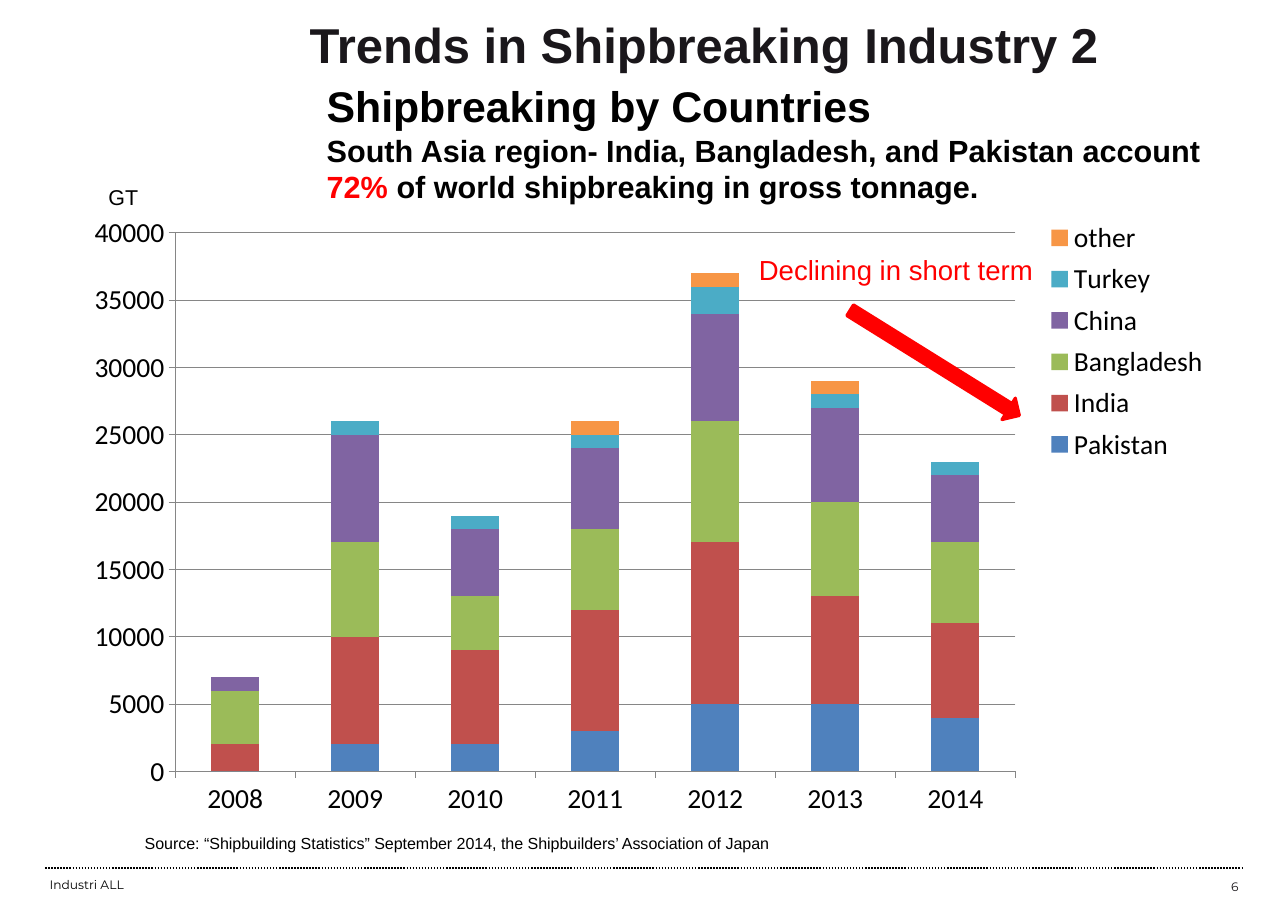
"""Slide on shipbreaking tonnage by country, 2008 to 2014."""
import pptx
import pptx.chart.data
import pptx.dml.color
import pptx.enum.chart
import pptx.enum.dml
import pptx.enum.shapes
import pptx.enum.text
import pptx.oxml
import pptx.oxml.ns
import pptx.util

BLACK, INK, RED, GRID = "000000", "1A171B", "FF0000", "868686"
LEFT, RIGHT = pptx.enum.text.PP_ALIGN.LEFT, pptx.enum.text.PP_ALIGN.RIGHT
TOP, MIDDLE = pptx.enum.text.MSO_ANCHOR.TOP, pptx.enum.text.MSO_ANCHOR.MIDDLE

deck = pptx.Presentation()
deck.slide_width = pptx.util.Inches(11.69)
deck.slide_height = pptx.util.Inches(8.27)
slide = deck.slides.add_slide(deck.slide_layouts[5])
rgb = pptx.dml.color.RGBColor.from_string


def share(left, top, width, height):
    """Turn percentages of the slide into lengths."""
    across, down = deck.slide_width / 100, deck.slide_height / 100
    return [int(left * across), int(top * down), int(width * across), int(height * down)]


def style(font, size, color, name="Arial", bold=False):
    """Set the look of a font."""
    font.size, font.name, font.bold = pptx.util.Pt(size), name, bold
    font.color.rgb = rgb(color)


footer_rule = slide.shapes.add_connector(
    pptx.enum.shapes.MSO_CONNECTOR.STRAIGHT, *share(3.51, 95.3, 96.49, 95.3))
footer_rule.line.color.rgb = rgb(BLACK)
footer_rule.line.width = pptx.util.Pt(1)
footer_rule.line.dash_style = pptx.enum.dml.MSO_LINE.ROUND_DOT
footer_rule._element.spPr.append(pptx.oxml.parse_xml(
    f"<a:effectLst {pptx.oxml.ns.nsdecls('a')}/>"))

summary = slide.shapes.title
summary.left, summary.top, summary.width, summary.height = share(24.42, 10.8, 73.4, 9.67)
frame = summary.text_frame
frame.auto_size = pptx.enum.text.MSO_AUTO_SIZE.NONE
frame.word_wrap = True
frame.vertical_anchor = MIDDLE
frame.margin_left = frame.margin_right = pptx.util.Inches(0.11)
frame.margin_top = frame.margin_bottom = pptx.util.Inches(0.06)
summary_lines = [
    [("Shipbreaking by Countries", 28, BLACK)],
    [("South Asia region- India, Bangladesh, and Pakistan account ", 20, BLACK),
     ("72% ", 20, RED),
     ("of world shipbreaking in gross tonnage.", 20, BLACK)],
]
for index, pieces in enumerate(summary_lines):
    paragraph = frame.add_paragraph() if index else frame.paragraphs[0]
    paragraph.alignment = LEFT
    for wording, size, color in pieces:
        run = paragraph.add_run()
        run.text = wording
        style(run.font, size, color, bold=True)

tonnage = pptx.chart.data.CategoryChartData()
tonnage.categories = [str(year) for year in range(2008, 2015)]
countries = [
    ("Pakistan", "4F81BD", [0, 2000, 2000, 3000, 5000, 5000, 4000]),
    ("India", "C0504D", [2000, 8000, 7000, 9000, 12000, 8000, 7000]),
    ("Bangladesh", "9BBB59", [4000, 7000, 4000, 6000, 9000, 7000, 6000]),
    ("China", "8064A2", [1000, 8000, 5000, 6000, 8000, 7000, 5000]),
    ("Turkey", "4BACC6", [0, 1000, 1000, 1000, 2000, 1000, 1000]),
    ("other", "F79646", [0, 0, 0, 1000, 1000, 1000, 0]),
]
for country, _, values in countries:
    tonnage.add_series(country, values)
chart = slide.shapes.add_chart(
    pptx.enum.chart.XL_CHART_TYPE.COLUMN_STACKED,
    *share(5.56, 22.37, 88.88, 68.56), tonnage).chart
style(chart.font, 18, BLACK, "Calibri")
chart.has_title = False
chart.has_legend = True
chart.legend.position = pptx.enum.chart.XL_LEGEND_POSITION.RIGHT
chart.legend.include_in_layout = False
columns = chart.plots[0]
columns.gap_width, columns.overlap = 150, 100
columns.vary_by_categories = False
for series, (_, color, _) in zip(columns.series, countries):
    series.format.fill.solid()
    series.format.fill.fore_color.rgb = rgb(color)
chart.value_axis.minimum_scale, chart.value_axis.maximum_scale = 0, 40000
chart.value_axis.major_unit = 5000
chart.value_axis.has_major_gridlines = True
for lines in (chart.value_axis, chart.category_axis, chart.value_axis.major_gridlines):
    lines.format.line.color.rgb = rgb(GRID)
    lines.format.line.width = pptx.util.Pt(0.75)
for axis in (chart.value_axis, chart.category_axis):
    axis.major_tick_mark = pptx.enum.chart.XL_TICK_MARK.OUTSIDE

plot_area = chart._chartSpace.chart.plotArea
legend_position = chart.legend._element.find(pptx.oxml.ns.qn("c:legendPos"))
for part in (plot_area, chart.legend._element):
    for old_layout in part.findall(pptx.oxml.ns.qn("c:layout")):
        part.remove(old_layout)
for target, *percents in [("inner", 9.05, 4.65, 73.4, 86.25), ("", 84.7, 1.5, 15, 41)]:
    x, y, w, h = [percent / 100 for percent in percents]
    inner = f'<c:layoutTarget val="{target}"/>' if target else ""
    layout = pptx.oxml.parse_xml(
        f"<c:layout {pptx.oxml.ns.nsdecls('c')}><c:manualLayout>{inner}"
        '<c:xMode val="edge"/><c:yMode val="edge"/>'
        f'<c:x val="{x}"/><c:y val="{y}"/><c:w val="{w}"/><c:h val="{h}"/>'
        "</c:manualLayout></c:layout>")
    if target:
        plot_area.insert(0, layout)
    else:
        legend_position.addnext(layout)

decline = slide.shapes.add_shape(
    pptx.enum.shapes.MSO_SHAPE.RIGHT_ARROW, *share(64.84, 38.45, 15.48, 2.78))
decline.rotation = 31.9
decline.shadow.inherit = False
decline.fill.solid()
decline.fill.fore_color.rgb = rgb(RED)
decline.line.color.rgb = rgb(RED)
decline.line.width = pptx.util.Pt(2)

captions = [
    ("Industri ALL", (2.91, 96.04, 51.84, 2.06), 8, BLACK, "Montserrat", False, LEFT, MIDDLE, 0.11),
    ("6", (73.76, 96.2, 23.35, 2.3), 8, INK, "Montserrat", False, RIGHT, MIDDLE, 0.11),
    ("Source: “Shipbuilding Statistics” September 2014, the Shipbuilders’ Association of Japan",
     (10.3, 90.81, 53.21, 3.51), 10.5, BLACK, "Arial", False, LEFT, TOP, 0.11),
    ("GT", (7.58, 19.66, 8.04, 4.11), 14, BLACK, "Arial", False, LEFT, TOP, 0.1),
    ("Declining in short term", (58.08, 27.15, 26.95, 4.84), 18, RED, "Arial", False, LEFT, TOP, 0.1),
    ("Trends in Shipbreaking Industry 2", (23.1, 0, 65.36, 9.67), 32, INK, "Arial", True, LEFT, MIDDLE, 0.11),
]
for wording, place, size, color, face, bold, alignment, anchor, inset in captions:
    caption = slide.shapes.add_textbox(*share(*place)).text_frame
    caption.word_wrap = True
    caption.vertical_anchor = anchor
    caption.margin_left = caption.margin_right = pptx.util.Inches(inset)
    caption.margin_top = caption.margin_bottom = pptx.util.Inches(inset - 0.05)
    caption.text = wording
    caption.paragraphs[0].alignment = alignment
    style(caption.paragraphs[0].runs[0].font, size, color, face, bold)

deck.save("out.pptx")
